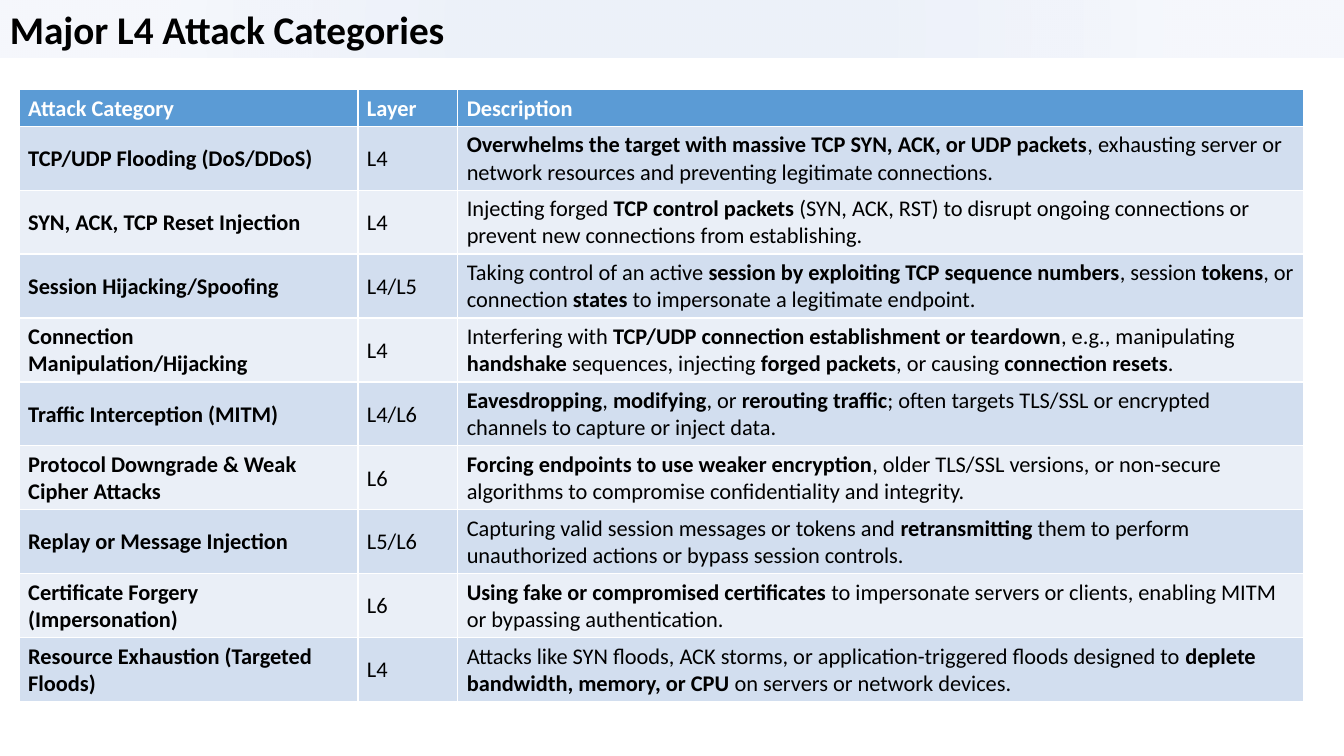
from lxml.etree import SubElement
from pptx import Presentation
from pptx.dml.color import RGBColor
from pptx.enum.shapes import MSO_SHAPE
from pptx.enum.text import MSO_ANCHOR, PP_ALIGN
from pptx.oxml.ns import qn
from pptx.util import Inches, Pt

FONT = "Calibri"
BLACK = RGBColor(0x00, 0x00, 0x00)
WHITE = RGBColor(0xFF, 0xFF, 0xFF)
BANNER_BLUE = RGBColor(0x44, 0x72, 0xC4)
HEADER_BLUE = RGBColor(0x5B, 0x9B, 0xD5)
BANDS = (RGBColor(0xD2, 0xDE, 0xEF), RGBColor(0xEA, 0xEF, 0xF7))

HEADINGS = ("Attack Category", "Layer", "Description")
COLUMN_WIDTHS = (3.36, 0.99, 8.39)
HEADER_HEIGHT = 0.36

# Text between asterisks is bold.
ATTACKS = (
    ("*TCP/UDP Flooding (DoS/DDoS)*", "L4",
     "*Overwhelms the target with massive TCP SYN, ACK, or UDP packets*, exhausting server or "
     "network resources and preventing legitimate connections."),
    ("*SYN, ACK, TCP Reset Injection*", "L4",
     "Injecting forged *TCP control packets *(SYN, ACK, RST) to disrupt ongoing connections or "
     "prevent new connections from establishing."),
    ("*Session Hijacking/Spoofing*", "L4/L5",
     "Taking control of an active *session by exploiting TCP sequence numbers*, session *tokens*, "
     "or connection *states* to impersonate a legitimate endpoint."),
    ("*Connection Manipulation/Hijacking*", "L4",
     "Interfering with *TCP/UDP connection establishment or teardown*, e.g., manipulating "
     "*handshake* sequences, injecting *forged packets*, or causing *connection resets*."),
    ("*Traffic Interception (MITM)*", "L4/L6",
     "*Eavesdropping*, *modifying*, or *rerouting traffic*; often targets TLS/SSL or encrypted "
     "channels to capture or inject data."),
    ("*Protocol Downgrade & Weak Cipher Attacks*", "L6",
     "*Forcing endpoints to use weaker encryption*, older TLS/SSL versions, or non-secure "
     "algorithms to compromise confidentiality and integrity."),
    ("*Replay or Message Injection*", "L5/L6",
     "Capturing valid session messages or tokens and *retransmitting* them to perform "
     "unauthorized actions or bypass session controls."),
    ("*Certificate Forgery (Impersonation)*", "L6",
     "*Using fake or compromised certificates *to impersonate servers or clients, enabling MITM "
     "or bypassing authentication."),
    ("*Resource Exhaustion (Targeted Floods)*", "L4",
     "Attacks like SYN floods, ACK storms, or application-triggered floods designed to *deplete "
     "bandwidth, memory, or CPU *on servers or network devices."),
)


def write_runs(paragraph, marked_text, size, color):
    for index, words in enumerate(marked_text.split("*")):
        if words:
            run = paragraph.add_run()
            run.text = words
            run.font.name = FONT
            run.font.size = Pt(size)
            run.font.bold = index % 2 == 1
            run.font.color.rgb = color


def fade_banner(banner):
    banner.fill.gradient()
    gradient = banner.fill._fill._gradFill
    for child in list(gradient):
        gradient.remove(child)
    stops = SubElement(gradient, qn("a:gsLst"))
    for position, opacity in ((26, 10), (76, 5)):
        stop = SubElement(stops, qn("a:gs"), pos=str(position * 1000))
        tint = SubElement(stop, qn("a:srgbClr"), val=str(BANNER_BLUE))
        SubElement(tint, qn("a:alpha"), val=str(opacity * 1000))
    circle = SubElement(gradient, qn("a:path"), path="circle")
    SubElement(circle, qn("a:fillToRect"), l="0", t="0", r="0", b="0")


def add_title_banner(slide, left, top, width, height):
    banner = slide.shapes.add_shape(MSO_SHAPE.RECTANGLE, Inches(left), Inches(top),
                                    Inches(width), Inches(height))
    banner.shadow.inherit = False
    banner.line.fill.background()
    fade_banner(banner)
    frame = banner.text_frame
    frame.word_wrap = True
    frame.vertical_anchor = MSO_ANCHOR.TOP
    title = frame.paragraphs[0]
    title.alignment = PP_ALIGN.LEFT
    write_runs(title, "*Major L4 Attack Categories*", 28, BLACK)


def fill_cell(cell, marked_text, background, color):
    cell.fill.solid()
    cell.fill.fore_color.rgb = background
    cell.vertical_anchor = MSO_ANCHOR.MIDDLE
    cell.margin_left = cell.margin_right = Inches(0.09)
    cell.margin_top = Inches(0.05)
    cell.margin_bottom = Inches(0.04)
    write_runs(cell.text_frame.paragraphs[0], marked_text, 16, color)


def add_attack_table(slide, left, top, width, height):
    attack_table = slide.shapes.add_table(len(ATTACKS) + 1, len(HEADINGS), Inches(left),
                                          Inches(top), Inches(width), Inches(height)).table
    for column, column_width in zip(attack_table.columns, COLUMN_WIDTHS):
        column.width = Inches(column_width)
    attack_height = (height - HEADER_HEIGHT) / len(ATTACKS)
    for index, row in enumerate(attack_table.rows):
        row.height = Inches(attack_height if index else HEADER_HEIGHT)
        if index:
            texts, background, color = ATTACKS[index - 1], BANDS[(index - 1) % 2], BLACK
        else:
            texts, background, color = [f"*{h}*" for h in HEADINGS], HEADER_BLUE, WHITE
        for cell, marked_text in zip(row.cells, texts):
            fill_cell(cell, marked_text, background, color)


def main():
    deck = Presentation()
    deck.slide_width, deck.slide_height = Inches(13.33), Inches(7.5)
    slide = deck.slides.add_slide(deck.slide_layouts[6])
    add_title_banner(slide, 0, 0, 13.33, 0.57)
    add_attack_table(slide, 0.19, 0.89, sum(COLUMN_WIDTHS), 6.07)
    deck.save("out.pptx")


if __name__ == "__main__":
    main()
